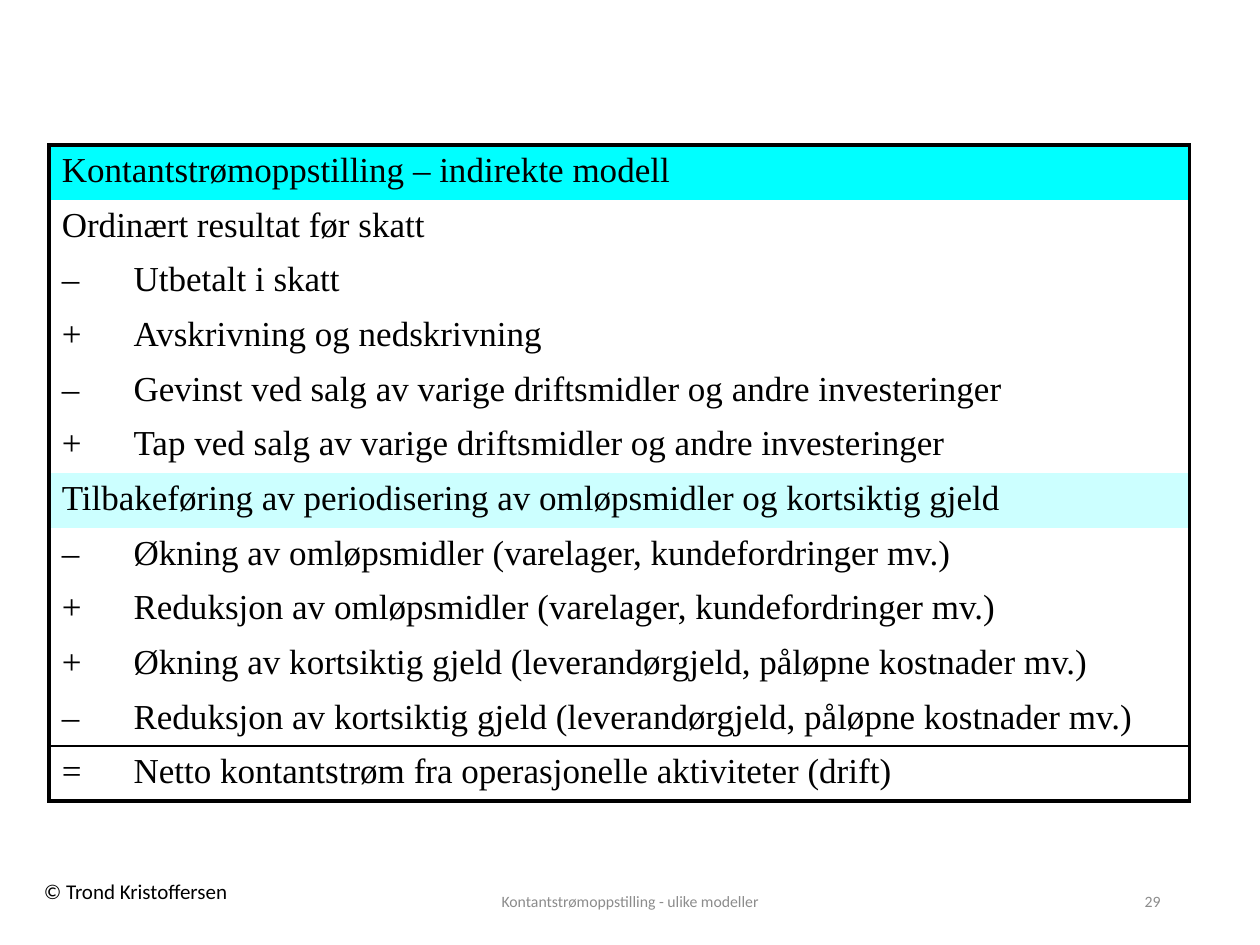
from dataclasses import dataclass
from typing import Optional

from lxml import etree
from pptx import Presentation
from pptx.dml.color import RGBColor
from pptx.enum import text
from pptx.oxml import ns
from pptx.util import Inches, Pt


@dataclass(frozen=True)
class Theme:
    ink: str = "000000"
    muted: str = "8C8C8C"
    header: str = "00FFFF"
    section: str = "CCFFFF"
    table_font: str = "Times New Roman"
    label_font: str = "Calibri"
    table_size: float = 20
    copyright_size: float = 12
    footer_size: float = 9
    frame_width: float = 2.25
    rule_width: float = 1


@dataclass(frozen=True)
class Line:
    label: str
    sign: str = ""
    fill: Optional[str] = None


@dataclass(frozen=True)
class Label:
    wording: str
    left: float
    top: float
    width: float
    height: float
    size: float
    color: str
    align: text.PP_ALIGN = text.PP_ALIGN.LEFT
    anchor: text.MSO_ANCHOR = text.MSO_ANCHOR.MIDDLE
    wrap: bool = True


THEME = Theme()

LINES = [
    Line("Kontantstrømoppstilling – indirekte modell", fill=THEME.header),
    Line("Ordinært resultat før skatt"),
    Line("Utbetalt i skatt", "–"),
    Line("Avskrivning og nedskrivning", "+"),
    Line("Gevinst ved salg av varige driftsmidler og andre investeringer", "–"),
    Line("Tap ved salg av varige driftsmidler og andre investeringer", "+"),
    Line("Tilbakeføring av periodisering av omløpsmidler og kortsiktig gjeld", fill=THEME.section),
    Line("Økning av omløpsmidler (varelager, kundefordringer mv.)", "–"),
    Line("Reduksjon av omløpsmidler (varelager, kundefordringer mv.)", "+"),
    Line("Økning av kortsiktig gjeld (leverandørgjeld, påløpne kostnader mv.)", "+"),
    Line("Reduksjon av kortsiktig gjeld (leverandørgjeld, påløpne kostnader mv.)", "–"),
    Line("Netto kontantstrøm fra operasjonelle aktiviteter (drift)", "="),
]

LABELS = [
    Label("© Trond Kristoffersen", 0.25, 6.92, 1.7, 0.3, THEME.copyright_size, THEME.ink,
          anchor=text.MSO_ANCHOR.TOP, wrap=False),
    Label("Kontantstrømoppstilling - ulike modeller", 3.31, 6.95, 3.38, 0.4,
          THEME.footer_size, THEME.muted, text.PP_ALIGN.CENTER),
    Label("29", 7.06, 6.95, 2.25, 0.4, THEME.footer_size, THEME.muted, text.PP_ALIGN.RIGHT),
]


def write(paragraph, wording: str, font: str, size: float, color: str) -> None:
    paragraph.text = wording
    paragraph.font.name = font
    paragraph.font.size = Pt(size)
    paragraph.font.color.rgb = RGBColor.from_string(color)


def add_label(slide, label: Label) -> None:
    shape = slide.shapes.add_textbox(
        Inches(label.left), Inches(label.top), Inches(label.width), Inches(label.height))
    frame = shape.text_frame
    frame.word_wrap = label.wrap
    frame.vertical_anchor = label.anchor
    paragraph = frame.paragraphs[0]
    write(paragraph, label.wording, THEME.label_font, label.size, label.color)
    paragraph.alignment = label.align


def set_borders(cell, widths: dict[str, float]) -> None:
    properties = cell._tc.get_or_add_tcPr()
    for side in "LRTB":
        width = widths.get(side, 0)
        border = etree.SubElement(properties, ns.qn(f"a:ln{side}"), w=str(Pt(width)))
        if width:
            fill = etree.SubElement(border, ns.qn("a:solidFill"))
            etree.SubElement(fill, ns.qn("a:srgbClr"), val=THEME.ink)
        else:
            etree.SubElement(border, ns.qn("a:noFill"))


def border_widths(row: int, column: int) -> dict[str, float]:
    last = len(LINES) - 1
    widths = {"L" if column == 0 else "R": THEME.frame_width}
    if row == 0:
        widths["T"] = THEME.frame_width
    if row == last - 1:
        widths["B"] = THEME.rule_width
    if row == last:
        widths.update(T=THEME.rule_width, B=THEME.frame_width)
    return widths


def add_statement(slide, left: float, top: float, columns: list[float], height: float) -> None:
    table = slide.shapes.add_table(
        len(LINES), len(columns), Inches(left), Inches(top),
        Inches(sum(columns)), Inches(height)).table
    table.first_row = False
    table.horz_banding = False
    for column, width in zip(table.columns, columns):
        column.width = Inches(width)

    for row, line in enumerate(LINES):
        cells = [table.cell(row, column) for column in range(len(columns))]
        for column, cell in enumerate(cells):
            widths = border_widths(row, column)
            if not line.sign:
                widths.update(L=THEME.frame_width, R=THEME.frame_width)
            set_borders(cell, widths)
            if line.fill:
                cell.fill.solid()
                cell.fill.fore_color.rgb = RGBColor.from_string(line.fill)
            else:
                cell.fill.background()
        if not line.sign:
            cells[0].merge(cells[1])
        wordings = [line.sign, line.label] if line.sign else [line.label]
        for cell, wording in zip(cells, wordings):
            write(cell.text_frame.paragraphs[0], wording,
                  THEME.table_font, THEME.table_size, THEME.ink)


def main() -> None:
    presentation = Presentation()
    presentation.slide_width = Inches(10)
    presentation.slide_height = Inches(7.5)
    slide = presentation.slides.add_slide(presentation.slide_layouts[6])
    for label in LABELS:
        add_label(slide, label)
    add_statement(slide, left=0.39, top=1.15, columns=[0.57, 8.48], height=5.2)
    presentation.save("out.pptx")


if __name__ == "__main__":
    main()
